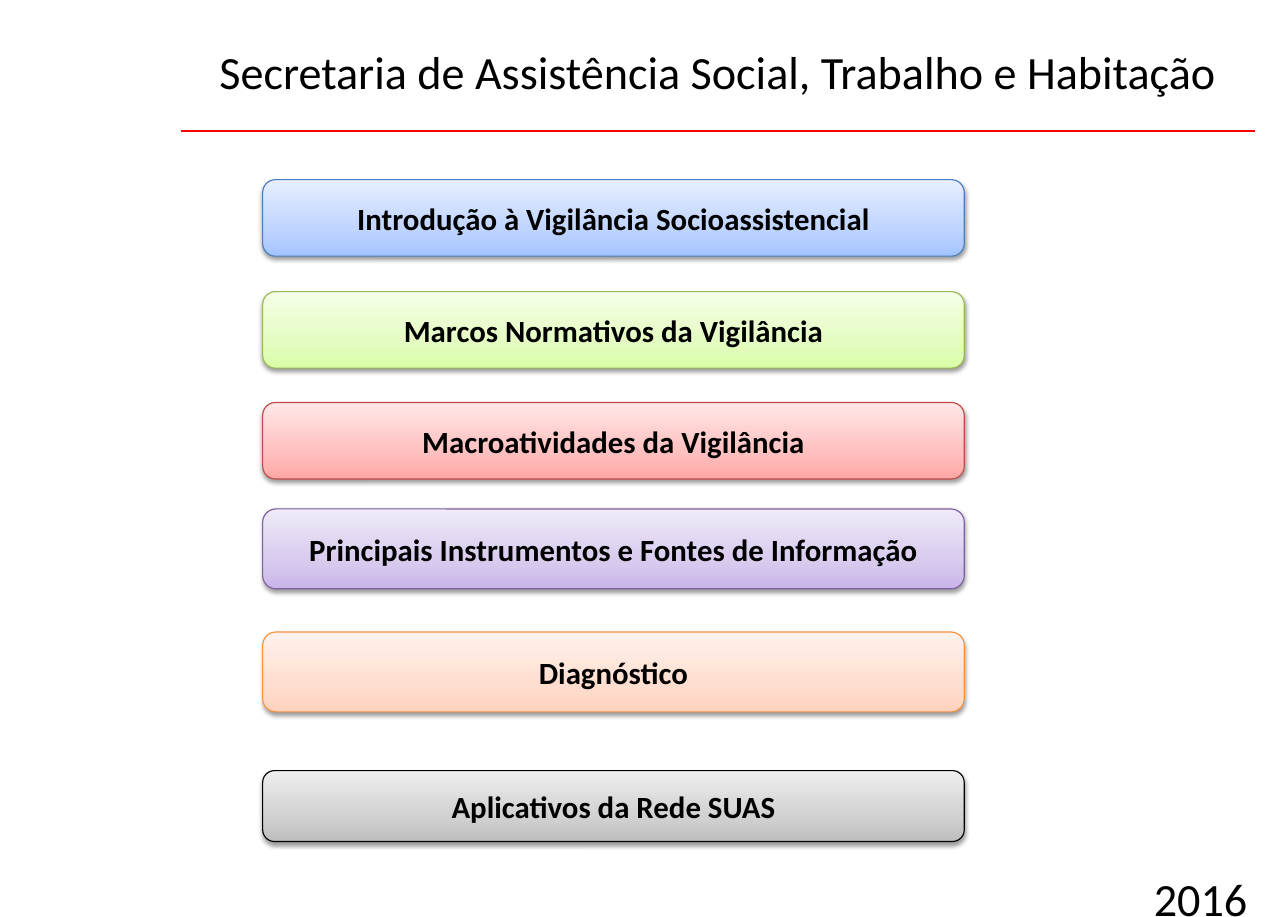
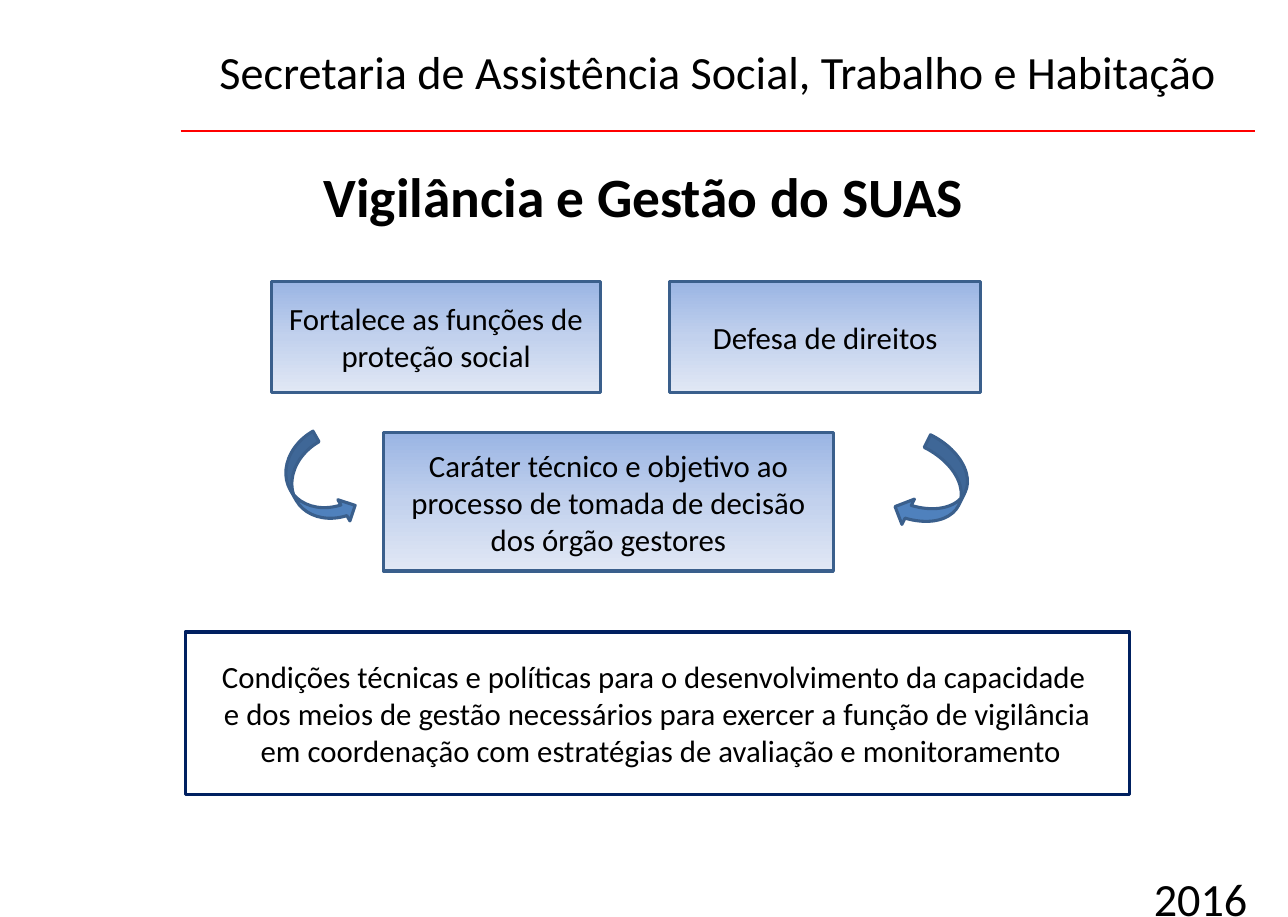
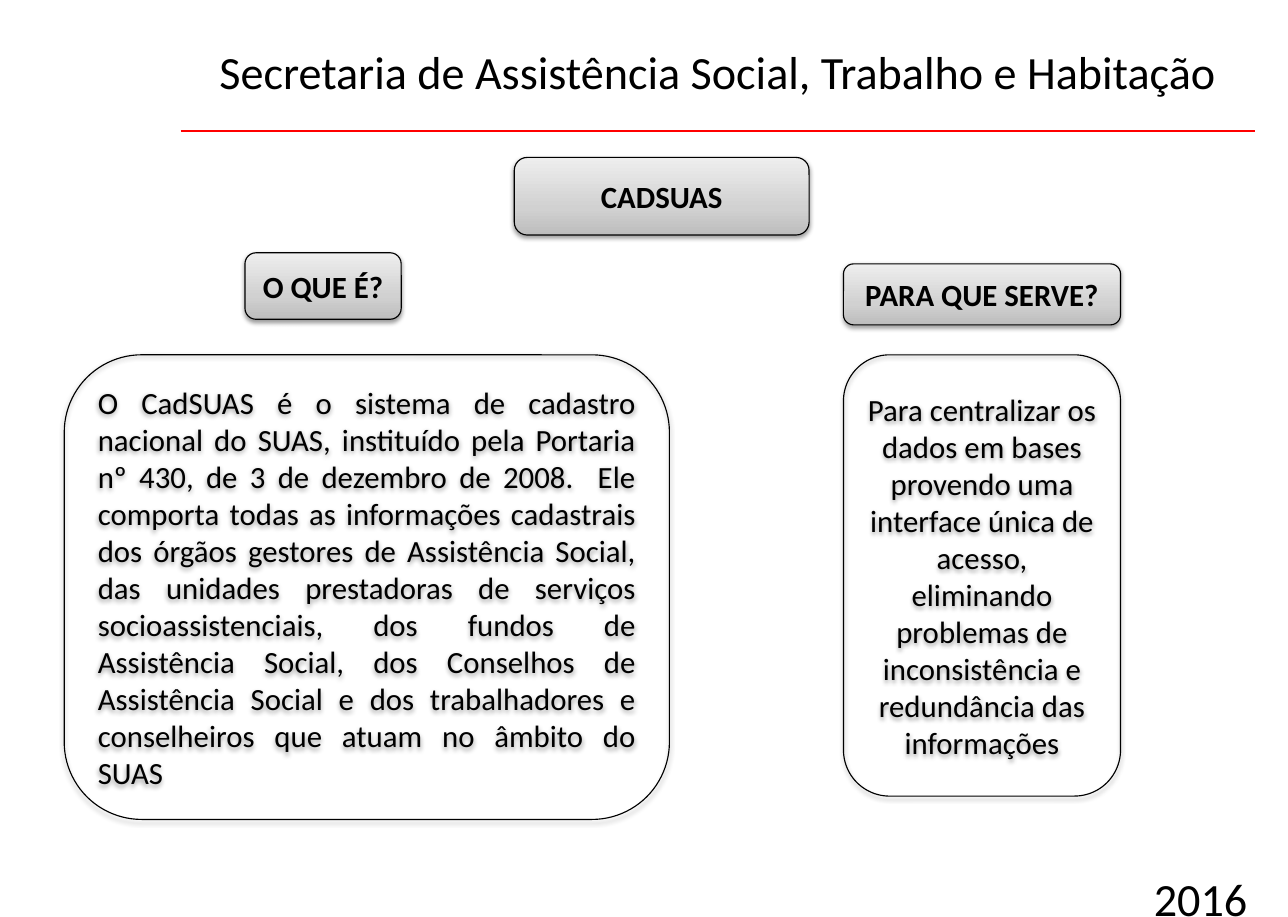
from lxml import etree
from pptx import Presentation, util as u
from pptx.dml.color import RGBColor
from pptx.enum import shapes, text
from pptx.oxml import ns

FONT = "Calibri"
COLORS = {"ink": "000000", "rule": "FF0000", "frame": "002060",
          "edge": "3A5F8C", "arrow": "4F81BD"}
SOFT = {
    "blue": ("4B7EBC", ["A4C4FF", "BFD4FF", "E6EEFF"]),
    "green": ("98B955", ["DAFDA7", "E4FCC2", "F5FFE7"]),
    "red": ("BF4C48", ["FFA6A5", "FFC0BF", "FFE7E7"]),
    "violet": ("7D60A0", ["C9B5E8", "D8CBEE", "F0EAF9"]),
    "orange": ("F69240", ["FFD2BD", "FFDED0", "FFF2ED"]),
    "gray": (COLORS["ink"], ["BDBDBD", "D1D1D1", "EEEEEE"]),
}
SKY = ["9AB5E4", "C2D1ED", "E1E8F5"]
KIND = shapes.MSO_SHAPE
ALIGN = text.PP_ALIGN


def rgb(code):
    """Turn a hex string into a colour."""
    return RGBColor.from_string(code)


def inch(box):
    """Turn a box of numbers into lengths."""
    return [u.Inches(n) for n in box]


def node(parent, tag, **attrs):
    """Add a drawing element under a parent."""
    item = etree.SubElement(parent, ns.qn("a:" + tag))
    for key, value in attrs.items():
        item.set(key, str(value))
    return item


def write(shape, words, size=20, bold=False, align=ALIGN.CENTER,
          anchor=text.MSO_ANCHOR.MIDDLE, pad=(0.1, 0.05)):
    """Write one paragraph per line of words into a shape."""
    frame = shape.text_frame
    frame.word_wrap = True
    frame.vertical_anchor = anchor
    frame.margin_left = frame.margin_right = u.Inches(pad[0])
    frame.margin_top = frame.margin_bottom = u.Inches(pad[1])
    for i, line in enumerate(words.split("\n")):
        para = frame.paragraphs[0] if i == 0 else frame.add_paragraph()
        para.alignment = align
        run = para.add_run()
        run.text = line
        run.font.name, run.font.size, run.font.bold = FONT, u.Pt(size), bold
        run.font.color.rgb = rgb(COLORS["ink"])


def label(slide, box, words, **style):
    """Place plain text at the top of a box."""
    area = slide.shapes.add_textbox(*inch(box))
    write(area, words, anchor=text.MSO_ANCHOR.TOP, pad=(0.11, 0.06), **style)


def blend(shape, codes, middle, angle):
    """Fill a shape with a gradient of three colours."""
    shape.fill.gradient()
    grad = shape._element.spPr.find(ns.qn("a:gradFill"))
    stops = grad.find(ns.qn("a:gsLst"))
    stops.clear()
    for code, place in zip(codes, (0, middle, 100)):
        node(node(stops, "gs", pos=place * 1000), "srgbClr", val=code)
    grad.find(ns.qn("a:lin")).set("ang", str(angle * 60000))


def block(slide, box, kind=KIND.RECTANGLE, edge=COLORS["edge"], width=2, fill=None):
    """Draw an outlined shape with a flat fill or none."""
    shape = slide.shapes.add_shape(kind, *inch(box))
    shape.shadow.inherit = False
    if fill:
        shape.fill.solid()
        shape.fill.fore_color.rgb = rgb(fill)
    else:
        shape.fill.background()
    shape.line.color.rgb = rgb(edge)
    shape.line.width = u.Pt(width)
    return shape


def card(slide, box, words, tone=None, **style):
    """Draw a rounded card with a soft shadow."""
    edge, codes = SOFT[tone] if tone else (COLORS["ink"], None)
    shape = block(slide, box, KIND.ROUNDED_RECTANGLE, edge, 0.75)
    if codes:
        blend(shape, codes, 35, 270)
    effect = shape._element.spPr.find(ns.qn("a:effectLst"))
    shade = node(effect, "outerShdw", blurRad=u.Pt(3.1), dist=u.Pt(1.6),
                 dir=90 * 60000, rotWithShape=0)
    node(node(shade, "srgbClr", val=COLORS["ink"]), "alpha", val=38000)
    write(shape, words, **style)


def panel(slide, box, words):
    """Draw a blue gradient panel with text."""
    shape = block(slide, box)
    blend(shape, SKY, 50, 90)
    write(shape, words)


def arrow(slide, box, kind, turn):
    """Draw a turned curved arrow."""
    block(slide, box, kind, fill=COLORS["arrow"]).rotation = turn


def start(deck):
    """Add a slide with the shared header, rule and year."""
    slide = deck.slides.add_slide(deck.slide_layouts[6])
    rule = slide.shapes.add_connector(shapes.MSO_CONNECTOR.STRAIGHT,
                                      *inch((1.63, 1.18, 11.32, 1.18)))
    rule.line.color.rgb = rgb(COLORS["rule"])
    rule.line.width = u.Pt(1.5)
    node(rule._element.spPr, "effectLst")
    label(slide, (1.87, 0.33, 9.42, 0.62),
          "Secretaria de Assistência Social, Trabalho e Habitação",
          size=30, align=ALIGN.LEFT)
    label(slide, (10.3, 7.79, 1.3, 0.48), "2016", size=30, align=ALIGN.LEFT)
    return slide


def agenda(slide, left, width):
    """Stack the topic cards in one column."""
    topics = [
        (1.62, 0.69, "blue", "Introdução à Vigilância Socioassistencial"),
        (2.63, 0.69, "green", "Marcos Normativos da Vigilância"),
        (3.63, 0.69, "red", "Macroatividades da Vigilância"),
        (4.59, 0.72, "violet", "Principais Instrumentos e Fontes de Informação"),
        (5.7, 0.72, "orange", "Diagnóstico"),
        (6.95, 0.64, "gray", "Aplicativos da Rede SUAS"),
    ]
    for top, height, tone, words in topics:
        card(slide, (left, top, width, height), words, tone, bold=True)


def scheme(slide, left, top):
    """Draw the management panels and their arrows from a corner."""
    panel(slide, (left, top, 2.97, 1), "Fortalece as funções de proteção social")
    panel(slide, (left + 3.59, top, 2.81, 1), "Defesa de direitos")
    panel(slide, (left + 1.01, top + 1.36, 4.06, 1.25),
          "Caráter técnico e objetivo ao processo de tomada de decisão dos órgão gestores")
    arrow(slide, (left + 0.18, top + 1.4, 0.44, 0.88), KIND.CURVED_RIGHT_ARROW, 330.4)
    arrow(slide, (left + 5.73, top + 1.45, 0.51, 0.85), KIND.CURVED_LEFT_ARROW, 26.3)


def manage(slide):
    """Fill the slide on surveillance and management."""
    label(slide, (0.58, 1.4, 10.45, 0.75), "Vigilância e Gestão do SUAS",
          size=36, bold=True)
    scheme(slide, 2.45, 2.54)
    base = block(slide, (1.67, 5.7, 8.52, 1.47), edge=COLORS["frame"])
    write(base, "Condições técnicas e políticas para o desenvolvimento da capacidade \n"
                "e dos meios de gestão necessários para exercer a função de vigilância\n"
                " em coordenação com estratégias de avaliação e monitoramento")


def answer(slide, head, body, ask, reply, align=ALIGN.CENTER):
    """Place a question card above its answer card."""
    card(slide, head, ask, "gray", bold=True)
    card(slide, body, reply, align=align)


def system(slide):
    """Fill the slide on the register."""
    card(slide, (4.64, 1.42, 2.66, 0.7), "CADSUAS", "gray", bold=True)
    answer(slide, (2.21, 2.28, 1.41, 0.6), (0.58, 3.2, 5.46, 4.19), "O QUE É?",
           "O CadSUAS é o sistema de cadastro nacional do SUAS, instituído pela "
           "Portaria nº 430, de 3 de dezembro de 2008.  Ele comporta todas as "
           "informações cadastrais dos órgãos gestores de Assistência Social, das "
           "unidades prestadoras de serviços socioassistenciais, dos fundos de "
           "Assistência Social, dos Conselhos de Assistência Social e dos "
           "trabalhadores e conselheiros que atuam no âmbito do SUAS", ALIGN.JUSTIFY)
    answer(slide, (7.61, 2.38, 2.5, 0.55), (7.61, 3.2, 2.5, 3.98), "PARA QUE SERVE?",
           "Para centralizar os dados em bases provendo uma interface única de "
           "acesso, eliminando problemas de inconsistência e redundância das "
           "informações")


def main():
    """Build and save the deck."""
    deck = Presentation()
    deck.slide_width, deck.slide_height = inch((11.62, 8.27))
    agenda(start(deck), 2.37, 6.33)
    manage(start(deck))
    system(start(deck))
    deck.save("out.pptx")


if __name__ == "__main__":
    main()
